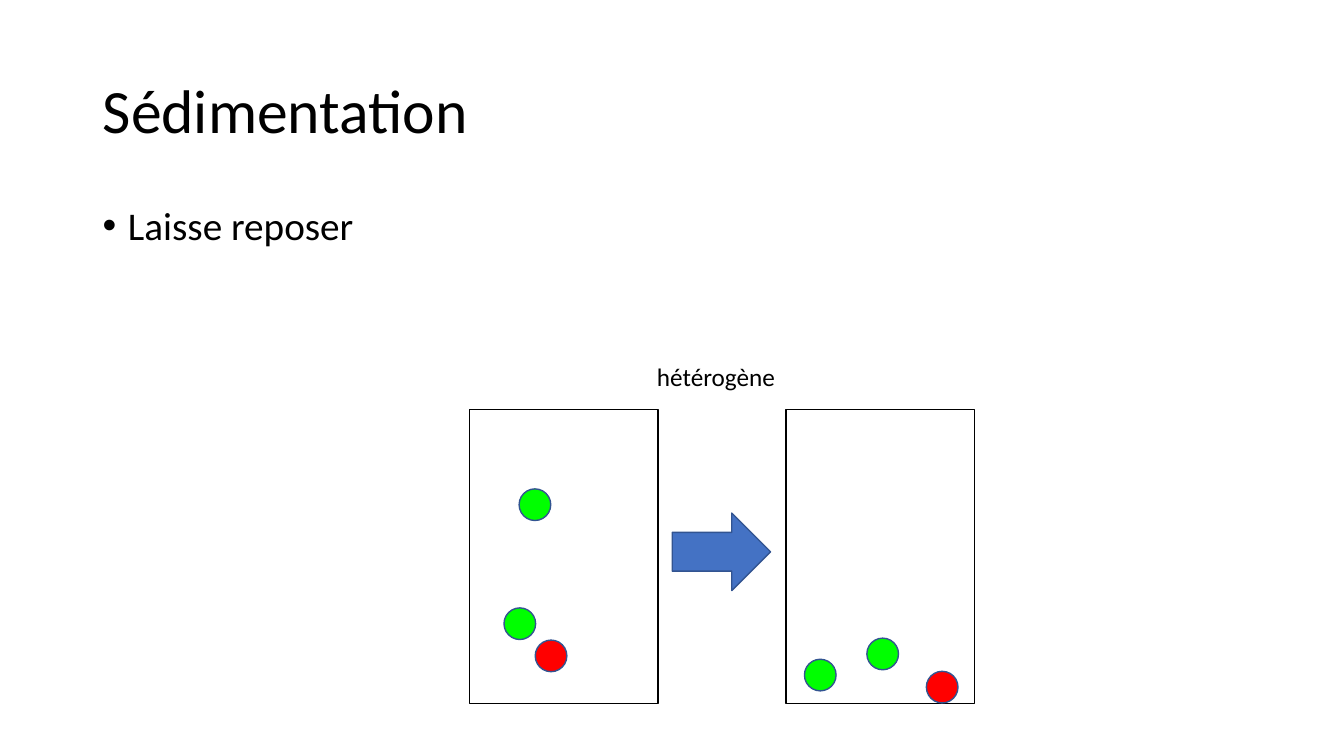
from lxml import etree
from pptx import Presentation
from pptx import util as u
from pptx.dml.color import RGBColor
from pptx.enum import shapes, text
from pptx.oxml.ns import qn

COLOURS = {
    "ink": "000000",
    "outline": "325491",
    "arrow": "4472C4",
    "light": "00FF00",
    "heavy": "FF0000",
}


def write(holder, wording, size, anchor=text.MSO_ANCHOR.TOP, spacing=1.0, bullet=None):
    frame = holder.text_frame
    frame.word_wrap = True
    frame.auto_size = text.MSO_AUTO_SIZE.NONE
    frame.vertical_anchor = anchor
    paragraph = frame.paragraphs[0]
    if bullet:
        properties = paragraph._p.get_or_add_pPr()
        properties.set("marL", str(u.Pt(18)))
        properties.set("indent", str(u.Pt(-18)))
        etree.SubElement(properties, qn("a:buFont"), typeface="Arial")
        etree.SubElement(properties, qn("a:buChar"), char=bullet)
    paragraph.alignment = text.PP_ALIGN.LEFT
    paragraph.line_spacing = spacing
    paragraph.space_before = u.Pt(0)
    run = paragraph.add_run()
    run.text = wording
    run.font.name = "Calibri"
    run.font.size = u.Pt(size)
    run.font.color.rgb = RGBColor.from_string(COLOURS["ink"])


def draw(preset, left, top, width, height, line, fill=None):
    """Add an outlined preset shape, measured in points; no fill leaves it hollow."""
    figure = slide.shapes.add_shape(
        preset, u.Pt(left), u.Pt(top), u.Pt(width), u.Pt(height))
    figure.shadow.inherit = False
    figure.line.color.rgb = RGBColor.from_string(COLOURS[line])
    figure.line.width = u.Pt(1)
    if fill:
        figure.fill.solid()
        figure.fill.fore_color.rgb = RGBColor.from_string(COLOURS[fill])
    else:
        figure.fill.background()


deck = Presentation()
deck.slide_width, deck.slide_height = u.Pt(960), u.Pt(540)
slide = deck.slides.add_slide(deck.slide_layouts[1])

# Title and list
title, body = slide.placeholders
for holder, top, height in ((title, 28.8, 104.4), (body, 144, 342.7)):
    holder.left, holder.top = u.Pt(66.2), u.Pt(top)
    holder.width, holder.height = u.Pt(828), u.Pt(height)
write(title, "Sédimentation", 44, anchor=text.MSO_ANCHOR.MIDDLE, spacing=0.9)
write(body, "Laisse reposer", 28, spacing=0.9, bullet="•")

# Containers before and after settling
for container_left in (335.5, 561.6):
    draw(shapes.MSO_SHAPE.RECTANGLE, container_left, 292.3, 134.6, 210.2, "ink")

# Particles
PARTICLES = {
    "light": [(370.8, 349.2), (619.2, 455.8), (360, 434.2), (574.6, 470.9)],
    "heavy": [(382.3, 457.2), (661.7, 479.5)],
}
DIAMETER = 22.6
for kind, places in PARTICLES.items():
    for left, top in places:
        draw(shapes.MSO_SHAPE.OVAL, left, top, DIAMETER, DIAMETER, "outline", kind)

# Mixture label and arrow
mixture = slide.shapes.add_textbox(u.Pt(462.2), u.Pt(254.9), u.Pt(222.5), u.Pt(28.8))
write(mixture, "hétérogène", 18)
draw(shapes.MSO_SHAPE.RIGHT_ARROW, 480.2, 366.5, 70.2, 55.4, "outline", "arrow")

deck.save("out.pptx")
